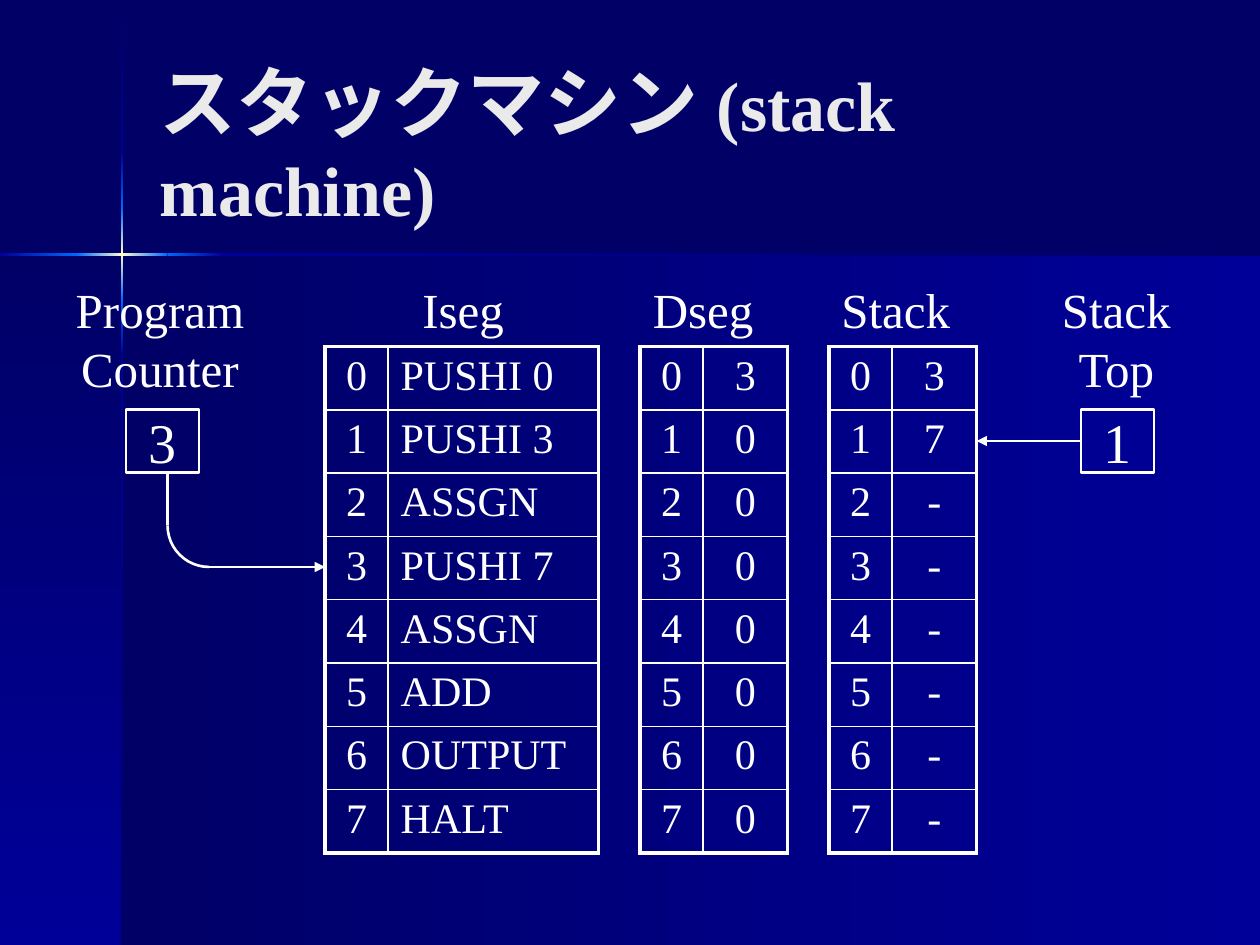
from itertools import pairwise

from lxml import etree
from pptx import Presentation
from pptx.dml.color import RGBColor
from pptx.enum.shapes import MSO_CONNECTOR, MSO_SHAPE
from pptx.enum.text import MSO_ANCHOR, PP_ALIGN
from pptx.oxml import parse_xml
from pptx.oxml.ns import qn
from pptx.util import Inches, Pt

RECT, ARC, STRAIGHT = MSO_SHAPE.RECTANGLE, MSO_SHAPE.ARC, MSO_CONNECTOR.STRAIGHT
LEFT, CENTER = PP_ALIGN.LEFT, PP_ALIGN.CENTER
TOP, MIDDLE, BOTTOM = MSO_ANCHOR.TOP, MSO_ANCHOR.MIDDLE, MSO_ANCHOR.BOTTOM
FONT = "Times New Roman"
A_NS = "http://schemas.openxmlformats.org/drawingml/2006/main"

WIDTH, HEIGHT = 10, 7.5
DARK, BLUE, BRIGHT, GLOW = "000066", "000099", "0066FF", "FFFFCC"
WHITE, TITLE_COLOR = "FFFFFF", "EAEAEA"
CROSS_X, CROSS_Y, BAR = 0.97, 2.02, 0.02
ACROSS, DOWN = 0, 90

TITLE = [("スタックマシン ", 44), ("(stack machine)", 40)]
SEGMENTS = [
    (2.58, 1.67, LEFT, ["PUSHI 0", "PUSHI 3", "ASSGN", "PUSHI 7",
                        "ASSGN", "ADD", "OUTPUT", "HALT"]),
    (5.08, 0.67, CENTER, ["3"] + ["0"] * 7),
    (6.58, 0.67, CENTER, ["3", "7"] + ["-"] * 6),
]
LABELS = [
    (0.5, 1.54, ["Program", "Counter"]),
    (3.25, 0.85, ["Iseg"]),
    (5.08, 1, ["Dseg"]),
    (6.58, 1.06, ["Stack"]),
    (8.33, 1.06, ["Stack", "Top"]),
]
REGISTERS = [(1, "3"), (8.58, "1")]
BAR_COLORS = [(DARK, BLUE), (BLUE, BRIGHT), (BRIGHT, GLOW, BRIGHT),
              (BRIGHT, BLUE), (BLUE, DARK)]
DOWN_STOPS = [0, 1.21, 1.65, 2.38, 2.82, HEIGHT]
ACROSS_STOPS = [0, 0.61, 1.33, 1.77, WIDTH]

LABEL_Y, TABLE_Y, TABLE_H, INDEX_W = 2.17, 2.75, 4.02, 0.5
BOX_W, BOX_H, BOX_Y = 0.58, 0.5, 3.25
BEND_X, BEND_Y, RADIUS = 1.33, 4.5, 0.33

prs = Presentation()
prs.slide_width, prs.slide_height = Inches(WIDTH), Inches(HEIGHT)
s = prs.slides.add_slide(prs.slide_layouts[6])


def rgb(color):
    return RGBColor.from_string(color)


s.background.fill.solid()
s.background.fill.fore_color.rgb = rgb(DARK)


def add_run(p, text, size, color=WHITE, bold=False):
    r = p.add_run()
    r.text = text
    r.font.name, r.font.size, r.font.bold = FONT, Pt(size), bold
    r.font.color.rgb = rgb(color)


def add_shape(kind, x, y, w, h):
    sp = s.shapes.add_shape(kind, Inches(x), Inches(y), Inches(w), Inches(h))
    sp.shadow.inherit = False
    sp.fill.background()
    sp.line.color.rgb = rgb(WHITE)
    sp.line.width = Pt(1.5)
    return sp


def add_gradient(x, y, w, h, colors, angle):
    sp = add_shape(RECT, x, y, w, h)
    sp.line.fill.background()
    stops = "".join(
        f'<a:gs pos="{i * 100000 // (len(colors) - 1)}"><a:srgbClr val="{c}"/></a:gs>'
        for i, c in enumerate(colors))
    fill = parse_xml(f'<a:gradFill xmlns:a="{A_NS}"><a:gsLst>{stops}</a:gsLst>'
                     f'<a:lin ang="{angle * 60000}" scaled="0"/></a:gradFill>')
    props = sp.fill._xPr
    props.replace(props.find(qn("a:noFill")), fill)


def add_text(x, y, w, h, anchor, wrap):
    tf = s.shapes.add_textbox(Inches(x), Inches(y), Inches(w), Inches(h)).text_frame
    tf.word_wrap, tf.vertical_anchor = wrap, anchor
    return tf


def add_line(x1, y1, x2, y2, arrow=False):
    line = s.shapes.add_connector(STRAIGHT, Inches(x1), Inches(y1), Inches(x2), Inches(y2))
    line.line.color.rgb = rgb(WHITE)
    line.line.width = Pt(1.5)
    if arrow:
        etree.SubElement(line.line._get_or_add_ln(), qn("a:tailEnd"), type="triangle")
    etree.SubElement(line._element.spPr, qn("a:effectLst"))


def set_borders(cell, widths):
    props = cell._tc.get_or_add_tcPr()
    for i, (side, width) in enumerate(widths.items()):
        props.insert(i, parse_xml(
            f'<a:ln{side} xmlns:a="{A_NS}" w="{Pt(width)}"><a:solidFill>'
            f'<a:srgbClr val="{WHITE}"/></a:solidFill></a:ln{side}>'))


def add_segment(x, value_w, align, values):
    count = len(values)
    table = s.shapes.add_table(count, 2, Inches(x), Inches(TABLE_Y),
                               Inches(INDEX_W + value_w), Inches(TABLE_H)).table
    table.first_row = table.horz_banding = False
    for column, width in zip(table.columns, (INDEX_W, value_w)):
        column.width = Inches(width)
    for i, value in enumerate(values):
        table.rows[i].height = Inches(TABLE_H / count)
        for j, (text, side) in enumerate([(str(i), CENTER), (value, align)]):
            cell = table.cell(i, j)
            cell.fill.background()
            p = cell.text_frame.paragraphs[0]
            p.alignment = side
            add_run(p, text, 24)
            outer = {"L": j == 0, "R": j == 1, "T": i == 0, "B": i == count - 1}
            set_borders(cell, {k: 2.25 if edge else 1 for k, edge in outer.items()})


add_gradient(CROSS_X, CROSS_Y, WIDTH - CROSS_X, HEIGHT - CROSS_Y, (DARK, BLUE), ACROSS)
add_gradient(0, CROSS_Y, CROSS_X, HEIGHT - CROSS_Y, (DARK, BLUE), DOWN)
for (start, end), colors in zip(pairwise(DOWN_STOPS), BAR_COLORS):
    add_gradient(CROSS_X - BAR / 2, start, BAR, end - start, colors, DOWN)
for (start, end), colors in zip(pairwise(ACROSS_STOPS), BAR_COLORS[1:]):
    add_gradient(start, CROSS_Y - BAR / 2, end - start, BAR, colors, ACROSS)

title = add_text(1.17, 0.31, 7.75, 1.57, BOTTOM, True)
for text, size in TITLE:
    add_run(title.paragraphs[0], text, size, TITLE_COLOR, True)

for segment in SEGMENTS:
    add_segment(*segment)

for x, w, lines in LABELS:
    tf = add_text(x, LABEL_Y, w, 0.1 + 0.47 * len(lines), TOP, False)
    for i, text in enumerate(lines):
        p = tf.add_paragraph() if i else tf.paragraphs[0]
        p.alignment = CENTER
        add_run(p, text, 28)

for x, value in REGISTERS:
    tf = add_shape(RECT, x, BOX_Y, BOX_W, BOX_H).text_frame
    tf.word_wrap, tf.vertical_anchor = False, MIDDLE
    tf.paragraphs[0].alignment = CENTER
    add_run(tf.paragraphs[0], value, 32)

add_line(BEND_X, BOX_Y + BOX_H, BEND_X, BEND_Y - RADIUS)
bend = add_shape(ARC, BEND_X, BEND_Y - 2 * RADIUS, 2 * RADIUS, 2 * RADIUS)
bend.adjustments[0], bend.adjustments[1] = 54, 108
add_line(BEND_X + RADIUS, BEND_Y, SEGMENTS[0][0], BEND_Y, True)
add_line(8.58, BOX_Y + BOX_H / 2, 7.75, BOX_Y + BOX_H / 2, True)

prs.save("out.pptx")
